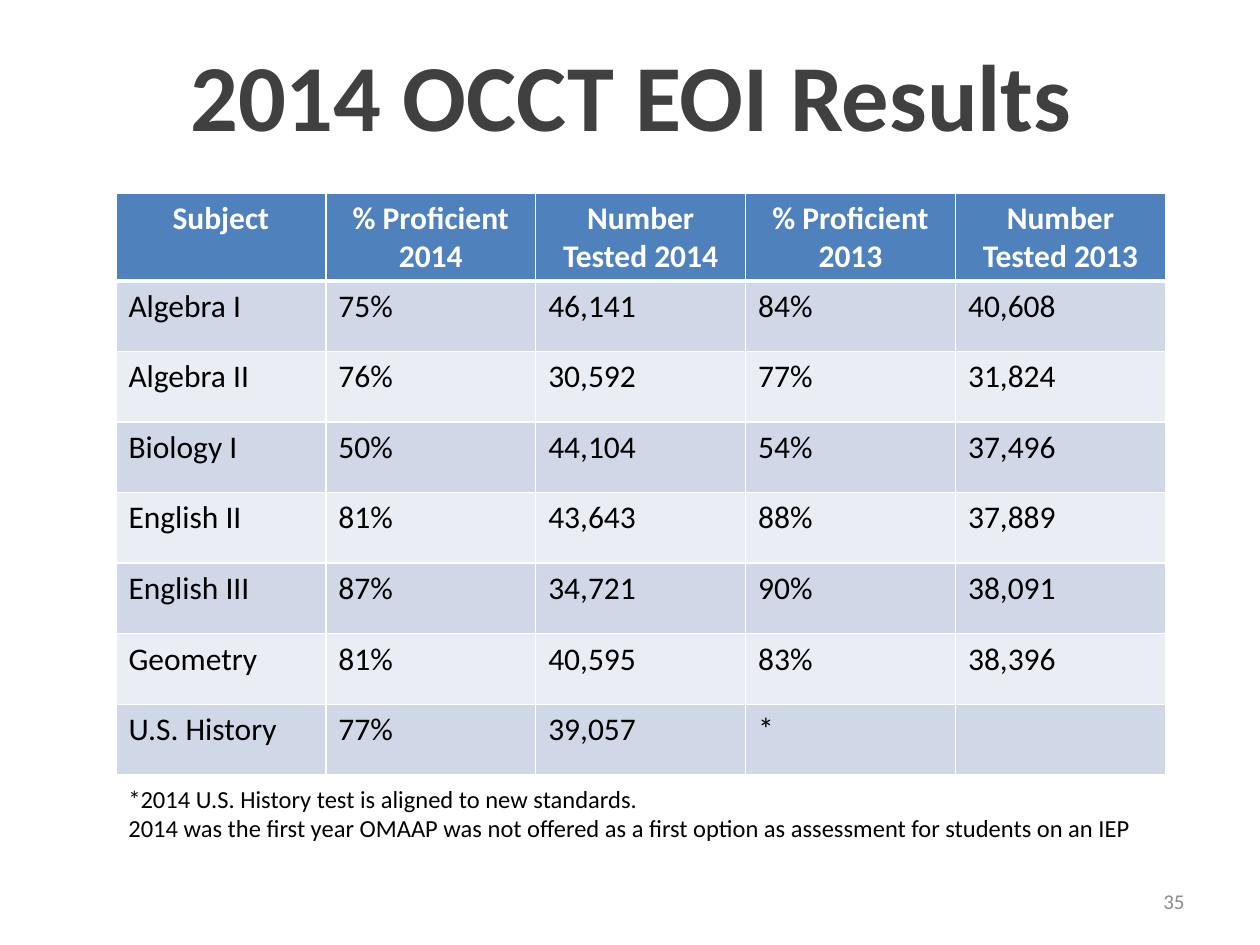
from lxml.etree import SubElement
from pptx import Presentation
from pptx.dml.color import RGBColor
from pptx.enum.text import MSO_ANCHOR, PP_ALIGN
from pptx.oxml.ns import qn
from pptx.util import Inches, Pt

FONT = "Calibri"
HEADINGS = ["Subject", "% Proficient 2014", "Number Tested 2014",
            "% Proficient 2013", "Number Tested 2013"]
RESULTS = [
    ["Algebra I", "75%", "46,141", "84%", "40,608"],
    ["Algebra II", "76%", "30,592", "77%", "31,824"],
    ["Biology I", "50%", "44,104", "54%", "37,496"],
    ["English II", "81%", "43,643", "88%", "37,889"],
    ["English III", "87%", "34,721", "90%", "38,091"],
    ["Geometry", "81%", "40,595", "83%", "38,396"],
    ["U.S. History", "77%", "39,057", "*", ""],
]
FOOTNOTES = [
    "*2014 U.S. History test is aligned to new standards.",
    "2014 was the first year OMAAP was not offered as a first option "
    "as assessment for students on an IEP",
]


def colour(hex_code):
    return RGBColor.from_string(hex_code)


def write(frame, lines, size=18, fill="000000", bold=False,
          align=PP_ALIGN.LEFT, spacing=None):
    """Fill a text frame with one paragraph for each line."""
    for index, line in enumerate(lines):
        para = frame.add_paragraph() if index else frame.paragraphs[0]
        para.alignment = align
        if spacing:
            para.line_spacing = spacing
        if not line:
            para.font.size = Pt(size)
            continue
        span = para.add_run()
        span.text = line
        span.font.name = FONT
        span.font.size = Pt(size)
        span.font.bold = bold
        span.font.color.rgb = colour(fill)


def add_borders(cell, bottom):
    """Draw white borders, with the bottom width given in points."""
    properties = cell._tc.get_or_add_tcPr()
    for side, width in (("L", 1), ("R", 1), ("T", 1), ("B", bottom)):
        line = SubElement(properties, qn(f"a:ln{side}"), w=str(Pt(width)))
        solid = SubElement(line, qn("a:solidFill"))
        SubElement(solid, qn("a:srgbClr"), val="FFFFFF")


def add_title(page, left, top, width, height):
    title = page.shapes.title
    title.left, title.top = Inches(left), Inches(top)
    title.width, title.height = Inches(width), Inches(height)
    title.text_frame.vertical_anchor = MSO_ANCHOR.TOP
    write(title.text_frame, ["2014 OCCT EOI Results"], size=54,
          fill="404040", bold=True, align=PP_ALIGN.CENTER, spacing=0.8)


def add_results(page, left, top, width, row_height):
    rows = [HEADINGS] + RESULTS
    table = page.shapes.add_table(
        len(rows), len(HEADINGS), Inches(left), Inches(top),
        Inches(width), Inches(row_height * len(rows))).table
    for row_index, row in enumerate(rows):
        heading = row_index == 0
        band = "4F81BD" if heading else ("E9EDF4", "D0D8E8")[row_index % 2]
        for column_index, text in enumerate(row):
            cell = table.cell(row_index, column_index)
            add_borders(cell, bottom=3 if heading else 1)
            cell.fill.solid()
            cell.fill.fore_color.rgb = colour(band)
            write(cell.text_frame, [text], bold=heading,
                  fill="FFFFFF" if heading else "000000",
                  align=PP_ALIGN.CENTER if heading else PP_ALIGN.LEFT)


def add_text(page, left, top, width, height, lines, wrap=True,
             anchor=MSO_ANCHOR.TOP, **text_format):
    box = page.shapes.add_textbox(Inches(left), Inches(top),
                                  Inches(width), Inches(height))
    box.text_frame.word_wrap = wrap
    box.text_frame.vertical_anchor = anchor
    write(box.text_frame, lines, **text_format)


def main():
    deck = Presentation()
    deck.slide_width, deck.slide_height = Inches(10), Inches(7.5)
    page = deck.slides.add_slide(deck.slide_layouts[5])

    # Page number and footnotes
    add_text(page, 7.17, 6.95, 2.33, 0.4, ["35"], anchor=MSO_ANCHOR.MIDDLE,
             size=12, fill="8C8C8C", align=PP_ALIGN.RIGHT)
    add_text(page, 0.92, 6.17, 8.25, 0.57, FOOTNOTES, wrap=False, size=14)

    # Results table and title
    add_results(page, 0.92, 1.53, 8.33, row_height=0.56)
    add_title(page, 0.01, 0.42, 10, 1.5)

    deck.save("out.pptx")


if __name__ == "__main__":
    main()
